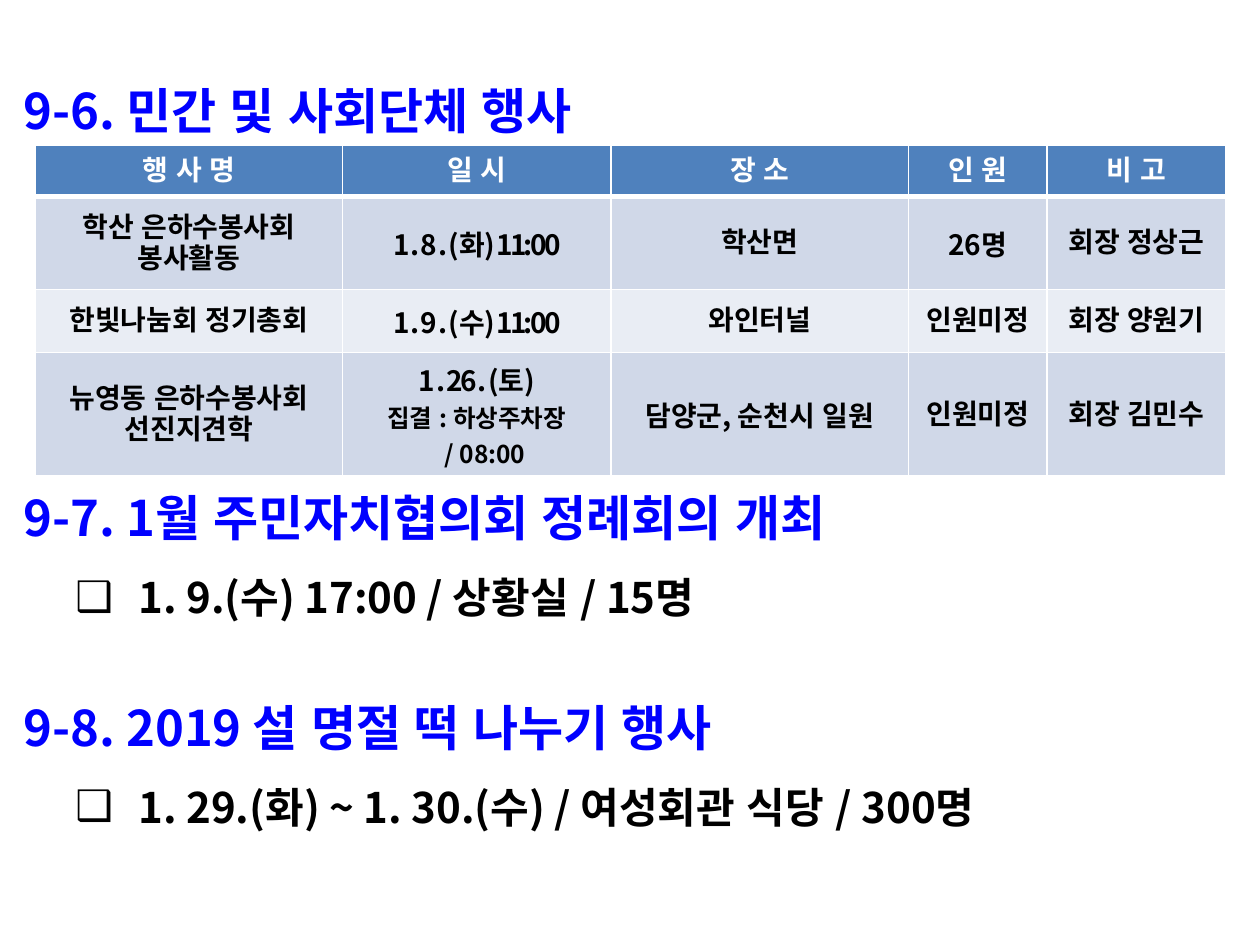
"""Builds the slide on community group events, the monthly meeting and the rice cake sharing."""
from dataclasses import dataclass

from lxml.etree import SubElement as add_node
from pptx import Presentation
from pptx.dml.color import RGBColor
from pptx.enum.text import MSO_ANCHOR as Anchor, PP_ALIGN as Align
from pptx.oxml.ns import qn
from pptx.util import Inches, Pt

COLORS = {
    "heading": "0000FF",
    "text": "000000",
    "white": "FFFFFF",
    "header": "4F81BD",
    "odd": "D0D8E8",
    "even": "E9EDF4",
}
BODY_FONT = "Noto Sans CJK KR"
HEADER_FONT = "Arial"
WIDTH, HEIGHT = Inches(10), Inches(7.5)


@dataclass(frozen=True)
class Section:
    top: float
    height: float
    heading: str
    detail: str = ""
    align: Align = Align.LEFT


@dataclass(frozen=True)
class Line:
    text: str
    size: int = 16
    spacing: float = 0
    indent: float = 0


SECTIONS = (
    Section(0.36, 3.23, " 9-6. 민간 및 사회단체 행사"),
    Section(3.59, 1.56, " 9-7. 1월 주민자치협의회 정례회의 개최",
            "1. 9.(수) 17:00 / 상황실 / 15명"),
    Section(5.25, 1.33, " 9-8. 2019 설 명절 떡 나누기 행사",
            "1. 29.(화) ~ 1. 30.(수) / 여성회관 식당 / 300명", Align.JUSTIFY),
)

COLUMN_SHARES = (0.244, 0.213, 0.236, 0.11, 0.142)
ROW_HEIGHTS = (0.41, 0.74, 0.5, 0.98)
HEADERS = ("행 사 명", "일 시", "장 소", "인 원", "비 고")
EVENTS = (
    ((Line("학산 은하수봉사회"), Line("봉사활동")),
     (Line("1 . 8 . (화) 11:00", spacing=-1.5),),
     (Line("학산면"),), (Line("26명"),), (Line("회장 정상근"),)),
    ((Line("한빛나눔회 정기총회"),),
     (Line("1 . 9 . (수) 11:00", spacing=-1.5),),
     (Line("와인터널"),), (Line("인원미정"),), (Line("회장 양원기"),)),
    ((Line("뉴영동 은하수봉사회"), Line("선진지견학")),
     (Line("1 . 26 . (토)", spacing=-1.5), Line("집결 : 하상주차장", 14),
      Line("/ 08:00", 14, indent=0.13)),
     (Line("담양군, 순천시 일원"),), (Line("인원미정"),), (Line("회장 김민수"),)),
)


def rgb(name: str) -> RGBColor:
    return RGBColor.from_string(COLORS[name])


def format_para(para, size: int, color: str, font: str = BODY_FONT, spacing: float = 0) -> None:
    for span in para.runs:
        span.font.size = Pt(size)
        span.font.bold = True
        span.font.name = font
        span.font.color.rgb = rgb(color)
        props = span.font._element
        add_node(props, qn("a:ea"), typeface=HEADER_FONT)
        if spacing:
            props.set("spc", str(int(spacing * 100)))


def add_bullet(para) -> None:
    para.level = 1
    props = para._p.get_or_add_pPr()
    props.set("marL", str(Inches(1)))
    props.set("indent", str(-Inches(0.5)))
    add_node(add_node(props, qn("a:buClr")), qn("a:srgbClr"), val=COLORS["text"])
    add_node(props, qn("a:buFont"), typeface=HEADER_FONT)
    add_node(props, qn("a:buChar"), char="❑")


def draw_section(page, section: Section) -> None:
    box = page.shapes.add_textbox(0, Inches(section.top), WIDTH, Inches(section.height))
    frame = box.text_frame
    frame.word_wrap = True
    heading = frame.paragraphs[0]
    heading.text = section.heading
    heading.alignment = section.align
    heading.line_spacing = 1.5
    format_para(heading, 28, "heading")
    if section.detail:
        detail = frame.add_paragraph()
        detail.text = section.detail
        detail.line_spacing = 1.5
        add_bullet(detail)
        format_para(detail, 24, "text")


def draw_borders(cell, bottom: float) -> None:
    props = cell._tc.get_or_add_tcPr()
    for side, width in (("L", 1), ("R", 1), ("T", 1), ("B", bottom)):
        edge = add_node(props, qn(f"a:ln{side}"), w=str(Pt(width)))
        add_node(add_node(edge, qn("a:solidFill")), qn("a:srgbClr"), val=COLORS["white"])


def fill_cell(cell, lines: tuple[Line, ...], fill: str, color: str, font: str,
              bottom: float) -> None:
    draw_borders(cell, bottom)
    cell.fill.solid()
    cell.fill.fore_color.rgb = rgb(fill)
    cell.vertical_anchor = Anchor.MIDDLE
    cell.text_frame.text = "\n".join(line.text for line in lines)
    for para, line in zip(cell.text_frame.paragraphs, lines):
        para.alignment = Align.CENTER
        if line.indent:
            para._p.get_or_add_pPr().set("marL", str(Inches(line.indent)))
        format_para(para, line.size, color, font, line.spacing)


def draw_events(page) -> None:
    frame = page.shapes.add_table(len(ROW_HEIGHTS), len(COLUMN_SHARES), Inches(0.28),
                                  Inches(1.15), Inches(9.45), Inches(sum(ROW_HEIGHTS)))
    table = frame.table
    for column, share in zip(table.columns, COLUMN_SHARES):
        column.width = int(WIDTH * share)
    for row, height in zip(table.rows, ROW_HEIGHTS):
        row.height = Inches(height)
    for index, title in enumerate(HEADERS):
        fill_cell(table.cell(0, index), (Line(title),), "header", "white", HEADER_FONT, 3)
    for number, event in enumerate(EVENTS, start=1):
        fill = "odd" if number % 2 else "even"
        for index, lines in enumerate(event):
            fill_cell(table.cell(number, index), lines, fill, "text", BODY_FONT, 1)


def main() -> None:
    deck = Presentation()
    deck.slide_width, deck.slide_height = WIDTH, HEIGHT
    page = deck.slides.add_slide(deck.slide_layouts[6])
    events, *others = SECTIONS
    draw_section(page, events)
    draw_events(page)
    for section in others:
        draw_section(page, section)
    deck.save("out.pptx")


if __name__ == "__main__":
    main()
